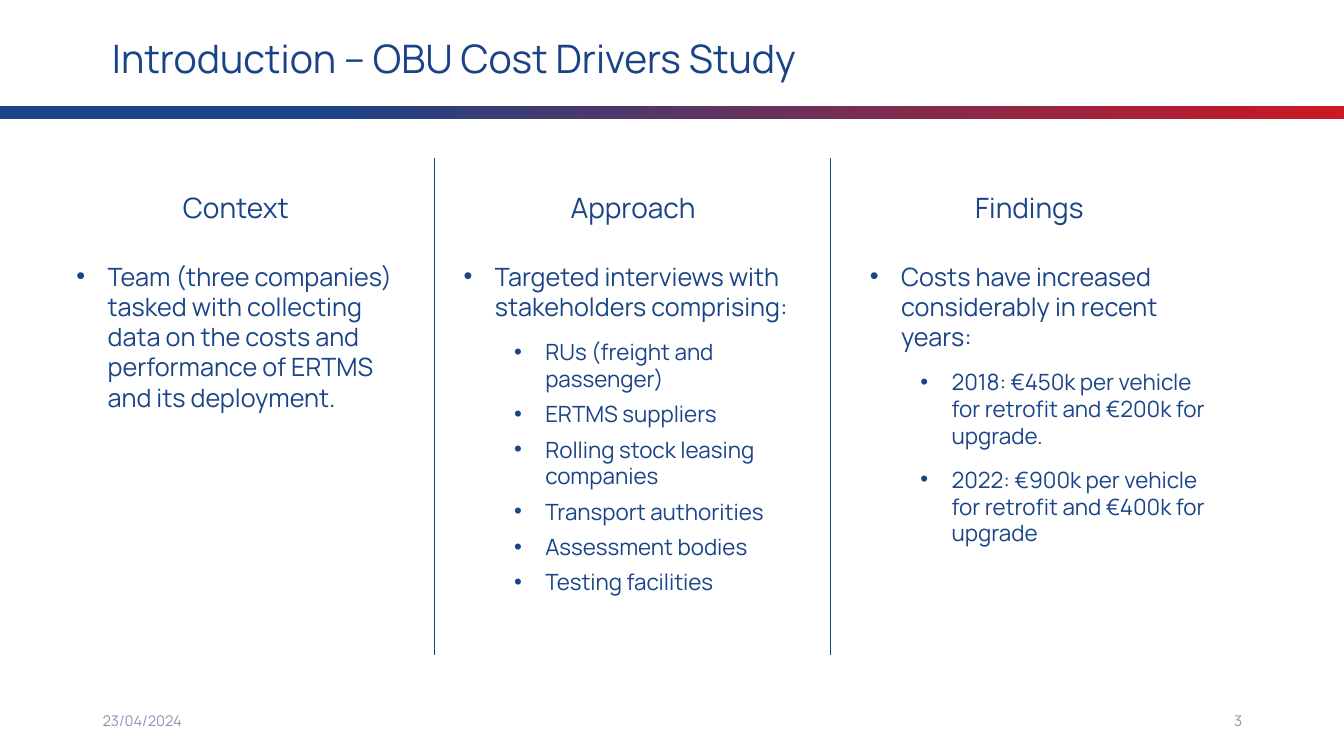
from pptx import Presentation
from pptx.dml.color import RGBColor
from pptx.enum.shapes import MSO_CONNECTOR as Conn, MSO_SHAPE as Shape
from pptx.enum.text import MSO_ANCHOR as Anchor, MSO_AUTO_SIZE as Fit, PP_ALIGN as Align
from pptx.oxml.ns import qn
from pptx.util import Pt
from lxml import etree

PX = 9144  # EMU per px, 100 px to the inch
BLUE = RGBColor(0x1A, 0x44, 0x88)
RED = RGBColor(0xCB, 0x18, 0x23)
GREY = RGBColor(0x8D, 0x94, 0xB0)

deck = Presentation()
deck.slide_width, deck.slide_height = 1333 * PX, 750 * PX
slide = deck.slides.add_slide(deck.slide_layouts[5])
shapes = slide.shapes


def style(para, size, color=BLUE, align=Align.LEFT):
    para.alignment = align
    for run in para.runs:
        run.font.name = "Manrope"
        run.font.size = Pt(size)
        run.font.color.rgb = color


def add_box(left, top, width, height):
    box = shapes.add_textbox(left * PX, top * PX, width * PX, height * PX)
    box.text_frame.word_wrap = True
    return box.text_frame


# Title
title = shapes.title
title.left, title.top, title.width, title.height = 101 * PX, 29 * PX, 841 * PX, 57 * PX
frame = title.text_frame
frame.text = "Introduction – OBU Cost Drivers Study"
frame.auto_size = Fit.NONE
frame.vertical_anchor = Anchor.TOP
style(frame.paragraphs[0], 28)

# Gradient band
band = shapes.add_shape(Shape.RECTANGLE, 0, 105 * PX, 1333 * PX, 13 * PX)
band.shadow.inherit = False
band.line.fill.background()
band.fill.gradient()
band.fill.gradient_angle = 0
for stop, place, color in zip(band.fill.gradient_stops, (0.23, 1), (BLUE, RED)):
    stop.position = place
    stop.color.rgb = color

# Column dividers
for x in (431, 824):
    rule = shapes.add_connector(Conn.STRAIGHT, x * PX, 157 * PX, x * PX, 650 * PX)
    rule.line.color.rgb = BLUE
    rule.line.width = Pt(0.5)
    etree.SubElement(rule._element.spPr, qn("a:effectLst"))

# Columns: heading, heading left, list left, width, height, gap after sub-items, items
columns = [
    ("Context", 141, 66, 336, 192, 6, [
        "Team (three companies) tasked with collecting data on the costs "
        "and performance of ERTMS and its deployment."]),
    ("Approach", 535, 450, 346, 345, 6, [
        "Targeted interviews with stakeholders comprising:",
        "RUs (freight and passenger)",
        "ERTMS suppliers",
        "Rolling stock leasing companies",
        "Transport authorities",
        "Assessment bodies",
        "Testing facilities"]),
    ("Findings", 928, 853, 365, 296, 12, [
        "Costs have increased considerably in recent years:",
        "2018: €450k per vehicle for retrofit and €200k for upgrade.",
        "2022: €900k per vehicle for retrofit and €400k for upgrade"]),
]
for name, head, left, width, height, gap, items in columns:
    frame = add_box(head, 184, 186, 44)
    frame.text = name
    style(frame.paragraphs[0], 20, align=Align.CENTER)

    frame = add_box(left, 254, width, height)
    frame.text = "\n".join(items)
    for i, para in enumerate(frame.paragraphs):
        sub = i > 0
        para.level = int(sub)
        props = para._p.get_or_add_pPr()
        props.set("marL", str((81 if sub else 31) * PX))
        props.set("indent", str(-31 * PX))
        etree.SubElement(props, qn("a:buFont"), typeface="Arial")
        etree.SubElement(props, qn("a:buChar"), char="•")
        para.space_after = Pt(gap if sub else 12)
        style(para, 16 if sub else 18)

# Footer
for text, left, align in (("23/04/2024", 92, Align.LEFT), ("3", 942, Align.RIGHT)):
    frame = add_box(left, 695, 300, 40)
    frame.vertical_anchor = Anchor.MIDDLE
    frame.text = text
    style(frame.paragraphs[0], 10.5, GREY, align)

deck.save("out.pptx")
